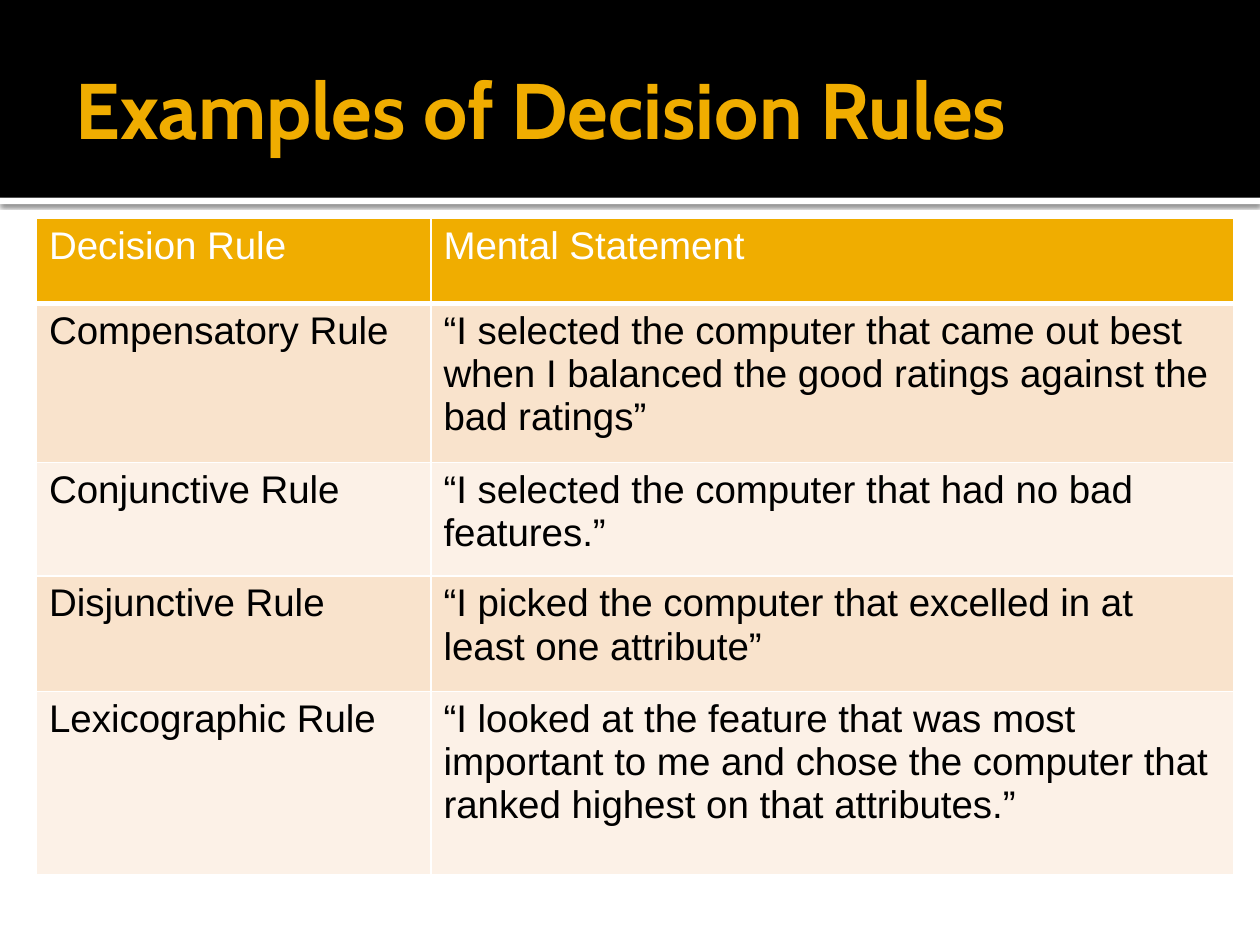
from lxml import etree
from pptx import Presentation
from pptx.dml.color import RGBColor
from pptx.enum.shapes import MSO_SHAPE
from pptx.enum.text import MSO_ANCHOR
from pptx.oxml import parse_xml
from pptx.oxml.ns import nsdecls
from pptx.util import Inches, Pt

RECTANGLE = MSO_SHAPE.RECTANGLE
MIDDLE = MSO_ANCHOR.MIDDLE
COLORS = {
    "black": "000000",
    "white": "FFFFFF",
    "gold": "F0AD00",
    "peach": "F9E3CC",
    "cream": "FCF1E7",
}
ROWS = [
    ("Decision Rule", "Mental Statement"),
    ("Compensatory Rule", "“I selected the computer that came out best when I balanced the good ratings against the bad ratings”"),
    ("Conjunctive Rule", "“I selected the computer that had no bad features.”"),
    ("Disjunctive Rule", "“I picked the computer that excelled in at least one attribute”"),
    ("Lexicographic Rule", "“I looked at the feature that was most important to me and chose the computer that ranked highest on that attributes.”"),
]
COLUMN_WIDTHS = [3.13, 6.37]
ROW_HEIGHTS = [0.68, 1.26, 0.9, 0.92, 1.45]


def write_text(text_frame, text, size, color, font="Arial", bold=False):
    run = text_frame.paragraphs[0].add_run()
    run.text = text
    run.font.name = font
    run.font.size = Pt(size)
    run.font.bold = bold
    run.font.color.rgb = RGBColor.from_string(COLORS[color])


def add_border(cell, side, width):
    line = etree.fromstring(
        f'<a:{side} {nsdecls("a")} w="{Pt(width)}"><a:solidFill>'
        f'<a:srgbClr val="{COLORS["white"]}"/></a:solidFill></a:{side}>'
    )
    cell._tc.get_or_add_tcPr().append(line)


presentation = Presentation()
presentation.slide_width = Inches(10)
presentation.slide_height = Inches(7.5)
slide = presentation.slides.add_slide(presentation.slide_layouts[6])

for top, height, color in [(1.57, 0.05, "white"), (0, 1.57, "black")]:
    band = slide.shapes.add_shape(RECTANGLE, 0, Inches(top), Inches(10), Inches(height))
    band.fill.solid()
    band.fill.fore_color.rgb = RGBColor.from_string(COLORS[color])
    band.line.fill.background()
    band.shadow.inherit = False
    if color == "white":
        band._element.spPr[-1].append(parse_xml(
            f'<a:outerShdw {nsdecls("a")} blurRad="{Pt(2.5)}" dist="{Pt(0.8)}" dir="5400000" '
            f'algn="tl" rotWithShape="0"><a:srgbClr val="{COLORS["black"]}">'
            '<a:alpha val="60000"/></a:srgbClr></a:outerShdw>'
        ))

title = slide.shapes.add_textbox(Inches(0.5), Inches(0.17), Inches(9), Inches(1.37))
title_frame = title.text_frame
title_frame.word_wrap = True
title_frame.vertical_anchor = MIDDLE
title_frame.margin_right = Inches(0.05)
write_text(title_frame, "Examples of Decision Rules", size=45, color="gold", font="Cabin", bold=True)

table = slide.shapes.add_table(
    len(ROWS), len(COLUMN_WIDTHS), Inches(0.29), Inches(1.73),
    Inches(sum(COLUMN_WIDTHS)), Inches(sum(ROW_HEIGHTS)),
).table
for column, width in zip(table.columns, COLUMN_WIDTHS):
    column.width = Inches(width)

for row_index, (texts, height) in enumerate(zip(ROWS, ROW_HEIGHTS)):
    table.rows[row_index].height = Inches(height)
    is_header = row_index == 0
    fill = "gold" if is_header else ("cream", "peach")[row_index % 2]
    for column_index, text in enumerate(texts):
        cell = table.cell(row_index, column_index)
        write_text(cell.text_frame, text, size=22, color="white" if is_header else "black")
        for side in ("lnL", "lnR", "lnT", "lnB"):
            add_border(cell, side, 3 if is_header and side == "lnB" else 1)
        cell.fill.solid()
        cell.fill.fore_color.rgb = RGBColor.from_string(COLORS[fill])

presentation.save("out.pptx")
